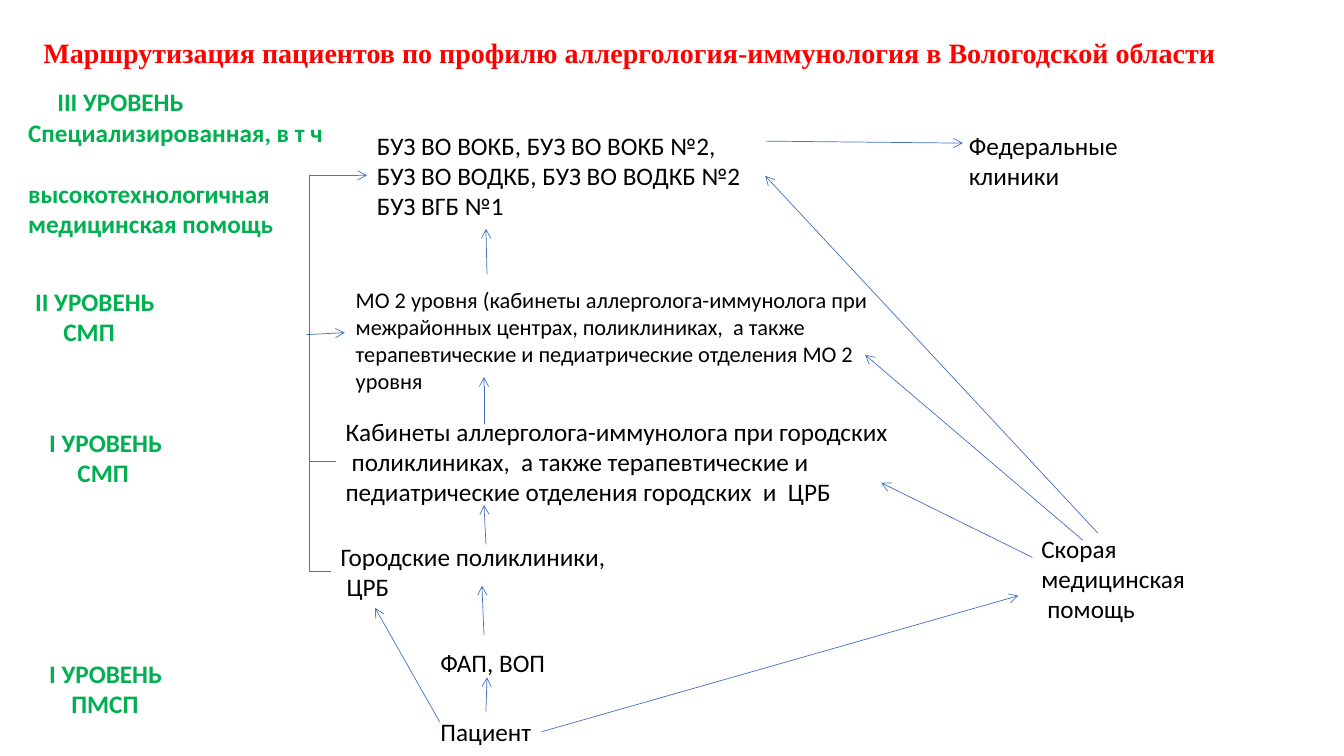
from pptx import Presentation
from pptx.dml.color import RGBColor
from pptx.enum.shapes import MSO_CONNECTOR as CONN
from pptx.enum.text import MSO_ANCHOR, MSO_AUTO_SIZE as AUTO, PP_ALIGN
from pptx.oxml.ns import qn
from pptx.util import Inches, Pt
from lxml.etree import SubElement

rgb = RGBColor.from_string


def write(sp, text, size=18, color="000000", bold=False, font="Calibri",
          indents=(), gaps=(), wrap=True):
    tf = sp.text_frame
    tf.text = text
    tf.word_wrap = wrap
    tf.auto_size = AUTO.SHAPE_TO_FIT_TEXT
    tf.vertical_anchor = MSO_ANCHOR.TOP
    for i, p in enumerate(tf.paragraphs):
        p.alignment = PP_ALIGN.LEFT
        if i < len(indents):
            p._p.get_or_add_pPr().set("indent", str(Inches(indents[i])))
        if i < len(gaps):
            p.space_before = Pt(gaps[i])
        f = p.runs[0].font
        f.name, f.size, f.bold = font, Pt(size), bold
        f.color.rgb = rgb(color)


def link(x1, y1, x2, y2, kind=CONN.STRAIGHT, arrow=True):
    c = s.shapes.add_connector(kind, Inches(x1), Inches(y1), Inches(x2), Inches(y2))
    c.line.color.rgb = rgb("4472C4")
    c.line.width = Pt(0.5)
    if arrow:
        SubElement(c.line._get_or_add_ln(), qn("a:tailEnd"), type="arrow")
    SubElement(c._element.spPr, qn("a:effectLst"))
    return c


prs = Presentation()
prs.slide_width, prs.slide_height = Inches(13.33), Inches(7.5)
s = prs.slides.add_slide(prs.slide_layouts[5])

title = s.shapes.title
title.left, title.top = Inches(0.33), Inches(0.3)
title.width, title.height = Inches(12.8), Inches(0.44)
write(title, "Маршрутизация пациентов по профилю аллергология-иммунология в Вологодской области",
      size=20, color="FF0000", bold=True, font="Times New Roman")

levels = [
    (0.18, 0.81, 3.45, 1.61, "III УРОВЕНЬ\nСпециализированная, в т ч\nвысокотехнологичная\nмедицинская помощь",
     (0.29,), (0, 0, 22)),
    (0.19, 2.79, 2.61, 0.71, "II УРОВЕНЬ\nСМП", (0.06, 0.34), ()),
    (0.33, 4.19, 1.93, 0.71, "I УРОВЕНЬ\nСМП", (0.06, 0.34), ()),
    (0.33, 6.48, 2.36, 0.71, "I УРОВЕНЬ\nПМСП", (0.06, 0.28), ()),
]
for x, y, w, h, text, indents, gaps in levels:
    sp = s.shapes.add_textbox(Inches(x), Inches(y), Inches(w), Inches(h))
    write(sp, text, color="00B050", bold=True, indents=indents, gaps=gaps)

stops = {
    "hospitals": (3.64, 1.24, 3.95, 1.01,
                  "БУЗ ВО ВОКБ, БУЗ ВО ВОКБ №2, БУЗ ВО ВОДКБ, БУЗ ВО ВОДКБ №2\nБУЗ ВГБ №1", {}),
    "federal": (9.51, 1.24, 2.59, 0.71, "Федеральные\nклиники", {}),
    "district": (3.43, 2.79, 5.58, 1.18,
                 "МО 2 уровня (кабинеты аллерголога-иммунолога при межрайонных центрах, "
                 "поликлиниках,  а также терапевтические и педиатрические отделения МО 2 уровня",
                 {"size": 16}),
    "offices": (3.33, 4.08, 5.83, 1.01,
                "Кабинеты аллерголога-иммунолога при городских\nполиклиниках,  а также "
                "терапевтические и педиатрические отделения городских  и  ЦРБ",
                {"indents": (0, 0.06)}),
    "polyclinics": (3.28, 5.32, 4.75, 0.71, "Городские поликлиники,\nЦРБ", {"indents": (0, 0.06)}),
    "ambulance": (10.23, 5.24, 2.5, 1.01, "Скорая\nмедицинская\nпомощь", {"indents": (0, 0, 0.06)}),
    "feldsher": (4.27, 6.37, 1.6, 0.4, "ФАП, ВОП", {}),
    "patient": (4.27, 7.06, 1.1, 0.4, "Пациент", {"wrap": False}),
}
boxes = {}
for name, (x, y, w, h, text, fmt) in stops.items():
    boxes[name] = s.shapes.add_textbox(Inches(x), Inches(y), Inches(w), Inches(h))
    write(boxes[name], text, **fmt)

arrows = [
    (4.8, 6.3, 4.78, 5.81),
    (4.82, 5.4, 4.8, 5.01),
    (4.8, 4.21, 4.8, 3.74),
    (4.83, 2.72, 4.82, 2.27),
    (4.36, 7.16, 3.72, 6.03),
    (10.24, 5.53, 8.74, 4.79),
    (10.74, 5.36, 8.58, 3.52),
    (7.59, 1.4, 9.55, 1.42),
    (3.04, 3.32, 3.42, 3.3),
]
for ends in arrows:
    link(*ends)
link(4.82, 7.06, 4.83, 6.72).begin_connect(boxes["patient"], 0)
link(5.37, 7.26, 10.1, 5.91).begin_connect(boxes["patient"], 3)
link(10.89, 5.29, 7.59, 1.74).end_connect(boxes["hospitals"], 3)

bypass = link(3.33, 4.58, 3.64, 1.74, CONN.ELBOW)
geom = bypass._element.spPr.find(qn("a:prstGeom"))
SubElement(geom.get_or_add_avLst(), qn("a:gd"), name="adj1", fmla="val -84100")

branch = link(3.28, 5.67, 3.07, 4.57, CONN.ELBOW, arrow=False)
branch._element.spPr.find(qn("a:prstGeom")).set("prst", "bentConnector2")

prs.save("out.pptx")
